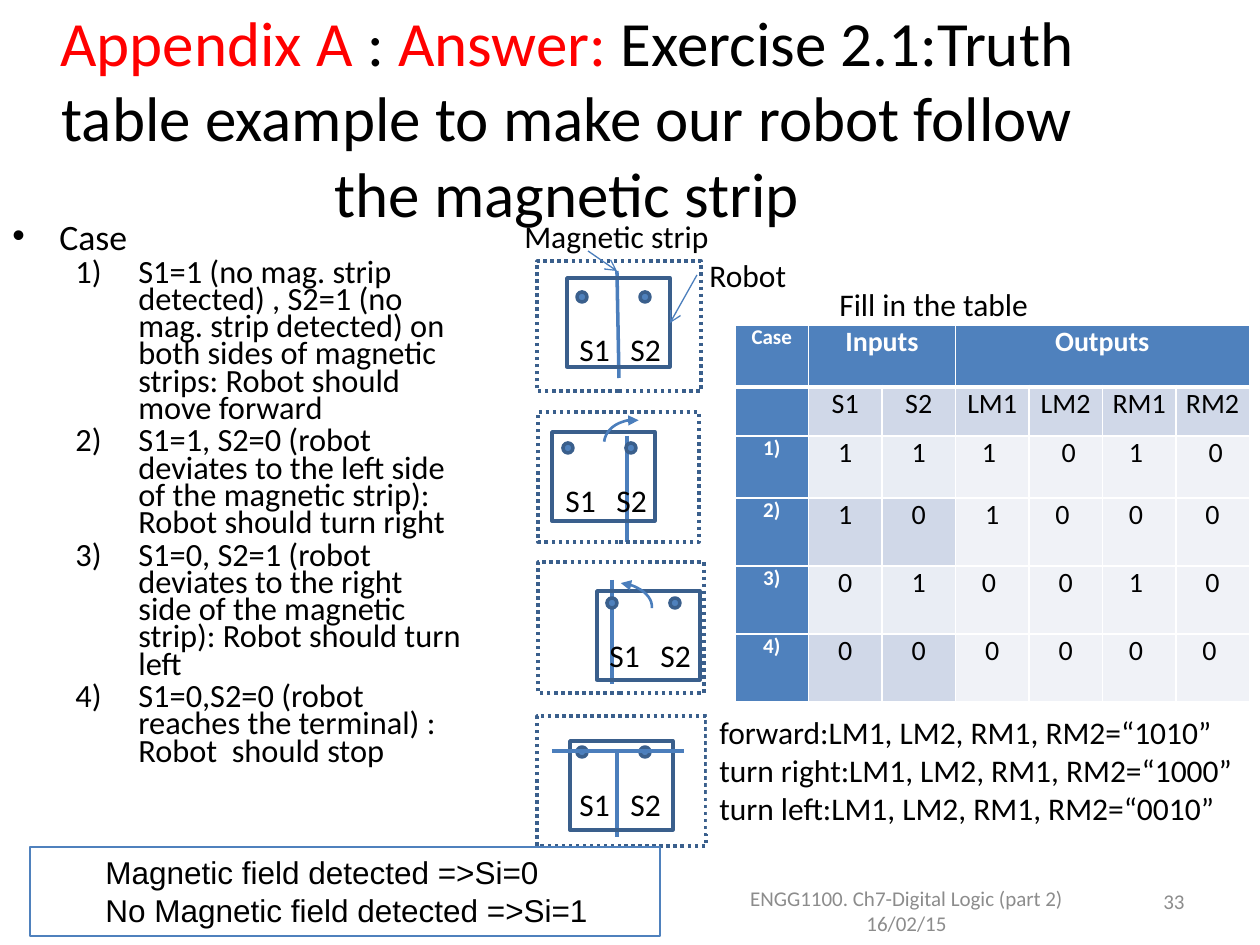
import pptx
import pptx.dml.color
import pptx.enum.dml
import pptx.enum.shapes
import pptx.enum.text
import pptx.oxml.ns
import pptx.util
from lxml import etree

SCALE = 914400 / 126
SHAPE = pptx.enum.shapes.MSO_SHAPE
ALIGN = pptx.enum.text.PP_ALIGN
ANCHOR = pptx.enum.text.MSO_ANCHOR
FIT = pptx.enum.text.MSO_AUTO_SIZE
qn = pptx.oxml.ns.qn


def px(length):
    return pptx.util.Emu(round(length * SCALE))


def rgb(color):
    return pptx.dml.color.RGBColor.from_string(color)


def add_xml(parent, tag, **attributes):
    return etree.SubElement(parent, qn(tag), attributes)


class Board:
    """Holds the style and the current slide, with one method per kind of element."""

    font = "Calibri"
    black, white, red, grey = "000000", "FFFFFF", "FF0000", "8C8C8C"
    blue, edge, stroke = "4F81BD", "3A5F8C", "4B7EBC"
    band, pale = "D0D8E8", "E9EDF4"

    def __init__(self, slide):
        self.slide = slide

    def style(self, font, size, color=black, name=font, bold=False):
        font.size, font.name, font.bold = pptx.util.Pt(size), name, bold
        font.color.rgb = rgb(color)

    def title(self, frame, runs, size):
        heading = self.slide.shapes.title
        heading.left, heading.top, heading.width, heading.height = map(px, frame)
        body = heading.text_frame
        body.auto_size, body.vertical_anchor = FIT.NONE, ANCHOR.MIDDLE
        paragraph = body.paragraphs[0]
        paragraph.alignment = ALIGN.CENTER
        for wording, color in runs:
            run = paragraph.add_run()
            run.text = wording
            self.style(run.font, size, color)

    def set_lines(self, body, lines, size, align=ALIGN.LEFT, indent=0, tab=None, **look):
        for index, line in enumerate(lines):
            paragraph = body.paragraphs[0] if index == 0 else body.add_paragraph()
            paragraph.text, paragraph.alignment = line, align
            properties = paragraph._p.get_or_add_pPr()
            if indent:
                properties.set("marL", str(px(indent)))
            if tab:
                stops = add_xml(properties, "a:tabLst")
                add_xml(stops, "a:tab", pos=str(px(tab)), algn="l")
            self.style(paragraph.font, size, **look)

    def text(self, frame, lines, size=18, wrap=False, anchor=ANCHOR.TOP, **look):
        body = self.slide.shapes.add_textbox(*map(px, frame)).text_frame
        body.word_wrap, body.vertical_anchor = wrap, anchor
        body.auto_size = FIT.NONE if wrap else FIT.SHAPE_TO_FIT_TEXT
        self.set_lines(body, lines, size, **look)

    def cases(self, frame, heading, steps):
        body = self.slide.shapes.add_textbox(*map(px, frame)).text_frame
        body.word_wrap = True
        for index, line in enumerate([heading] + steps):
            first = index == 0
            paragraph = body.paragraphs[0] if first else body.add_paragraph()
            paragraph.text, paragraph.line_spacing = line, 0.7
            if not first:
                paragraph.level, paragraph.space_before = 1, pptx.util.Pt(3)
            margin, hanging = (47, -47) if first else (126, -63)
            properties = paragraph._p.get_or_add_pPr()
            properties.set("marL", str(px(margin)))
            properties.set("indent", str(px(hanging)))
            if first:
                add_xml(properties, "a:buFont", typeface="Arial")
                add_xml(properties, "a:buChar", char="•")
            else:
                add_xml(properties, "a:buAutoNum", type="arabicParenR")
            self.style(paragraph.font, 20.4 if first else 18.5)

    def shape(self, kind, frame, fill=None, line=None, weight=2, dotted=False):
        shape = self.slide.shapes.add_shape(kind, *map(px, frame))
        shape.shadow.inherit = False
        if fill:
            shape.fill.solid()
            shape.fill.fore_color.rgb = rgb(fill)
        else:
            shape.fill.background()
        if line:
            shape.line.color.rgb = rgb(line)
            shape.line.width = pptx.util.Pt(weight)
            if dotted:
                shape.line.dash_style = pptx.enum.dml.MSO_LINE.ROUND_DOT
        else:
            shape.line.fill.background()
        return shape

    def panel(self, frame, lines, fill=None, line=None, **look):
        body = self.shape(SHAPE.RECTANGLE, frame, fill, line, 0.75).text_frame
        body.word_wrap, body.vertical_anchor = True, ANCHOR.TOP
        self.set_lines(body, lines, 18, **look)

    def turn(self, frame, flip=False):
        arc = self.shape(SHAPE.ARC, frame, line=self.stroke, weight=1.5)
        arc.rotation = 276.1
        if flip:
            arc._element.spPr.find(qn("a:xfrm")).set("flipV", "1")
        add_xml(arc.line._get_or_add_ln(), "a:tailEnd", type="triangle")

    def line(self, ends, weight=2, arrow=False):
        straight = pptx.enum.shapes.MSO_CONNECTOR.STRAIGHT
        line = self.slide.shapes.add_connector(straight, *map(px, ends))
        line.line.color.rgb = rgb(self.stroke)
        line.line.width = pptx.util.Pt(weight)
        if arrow:
            add_xml(line.line._get_or_add_ln(), "a:tailEnd", type="arrow")
        add_xml(line._element.spPr, "a:effectLst")

    def robot(self, field, body, sensor, strip):
        self.line(strip)
        self.shape(SHAPE.RECTANGLE, field, line=self.edge, dotted=True)
        self.shape(SHAPE.RECTANGLE, (*body, 103, 89), line=self.edge)
        left, top = sensor
        for x in (left, left + 63):
            self.shape(SHAPE.OVAL, (x, top, 10, 10), self.blue, self.edge)
        self.text((left - 10, top + 32, 108, 50), ["S1\tS2"], tab=51)

    def cell(self, cell, wording, fill, size=16, opacity=None, thick=None, **look):
        cell.margin_left = cell.margin_right = px(9)
        cell.margin_top = cell.margin_bottom = 0
        cell.fill.solid()
        cell.fill.fore_color.rgb = rgb(fill)
        properties = cell._tc.get_or_add_tcPr()
        if opacity:
            color = properties.find(qn("a:solidFill"))[0]
            add_xml(color, "a:alpha", val=str(opacity * 1000))
        for index, side in enumerate(("lnL", "lnR", "lnT", "lnB")):
            width = pptx.util.Pt(3 if side == thick else 1)
            border = add_xml(properties, "a:" + side, w=str(width))
            add_xml(add_xml(border, "a:solidFill"), "a:srgbClr", val=self.white)
            properties.insert(index, border)
        self.set_lines(cell.text_frame, [wording], size, ALIGN.CENTER, **look)

    def truth_table(self, corner, column, heights, rows):
        frame = (*corner, column * len(rows[0]), sum(heights))
        table = self.slide.shapes.add_table(
            len(rows), len(rows[0]), *map(px, frame)).table
        for part in table.columns:
            part.width = px(column)
        for part, height in zip(table.rows, heights):
            part.height = px(height)
        for r, row in enumerate(rows):
            for c, wording in enumerate(row):
                cell = table.cell(r, c)
                thick = {0: "lnB", 1: "lnT"}.get(r)
                if r == 0 or c == 0:
                    self.cell(cell, wording, self.blue, 16 if c else 12,
                              thick=thick, color=self.white, bold=True)
                elif r > 1 and c > 2:
                    self.cell(cell, wording, self.pale, opacity=68)
                else:
                    self.cell(cell, wording, self.band if r % 2 else self.pale, thick=thick)
        table.cell(0, 1).merge(table.cell(0, 2))
        table.cell(0, 3).merge(table.cell(0, 6))


def main():
    deck = pptx.Presentation()
    deck.slide_width, deck.slide_height = px(1260), px(945)
    board = Board(deck.slides.add_slide(deck.slide_layouts[5]))

    board.title((0, 38, 1134, 157), [
        ("Appendix A ", board.red), (": ", board.black), ("Answer: ", board.red),
        ("Exercise 2.1:Truth table example to make our robot follow the magnetic strip",
         board.black)], 36)
    board.cases((0, 220, 474, 624), "Case", [
        "S1=1 (no mag. strip detected) , S2=1 (no mag. strip detected) on both sides "
        "of magnetic strips: Robot should move forward",
        "S1=1, S2=0 (robot deviates to the left side of the magnetic strip): "
        "Robot should turn right",
        "S1=0, S2=1 (robot deviates to the right side of the magnetic strip): "
        "Robot should turn left",
        "S1=0,S2=0 (robot reaches the terminal) : Robot  should stop"])
    board.truth_table((735, 325), 73.5, (62, 49, 62, 68, 68, 68), [
        ("Case", "Inputs", "", "Outputs", "", "", ""),
        ("", "S1", "S2", "LM1", "LM2", "RM1", "RM2"),
        ("1)", "1", "1", "1 ", " 0", "1 ", " 0"),
        ("2)", "1", "0", "1", "0 ", "0 ", "0"),
        ("3)", "0", "1", "0 ", "0", "1 ", "0"),
        ("4)", "0", "0", "0", "0", "0 ", "0 ")])

    for scene in (
            ((537, 261, 164, 130), (567, 278), (577, 292), (617, 271, 619, 378)),
            ((538, 412, 161, 130), (552, 432), (563, 443), (627, 436, 627, 542)),
            ((538, 562, 166, 131), (597, 591), (607, 598), (612, 580, 612, 684)),
            ((537, 716, 169, 130), (570, 741), (577, 747), (617, 752, 617, 837))):
        board.robot(*scene)
    board.line((552, 751, 684, 751))
    board.turn((611, 413, 50, 64))
    board.turn((597, 571, 43, 67), flip=True)

    board.text((512, 211, 212, 50), ["Magnetic strip"])
    board.line((588, 251, 617, 271), 0.75, arrow=True)
    board.text((697, 250, 103, 50), ["Robot"])
    board.line((697, 275, 670, 323), 0.75, arrow=True)
    board.text((827, 279, 217, 50), ["Fill in the table"])

    board.panel((707, 707, 544, 127), [
        "forward:LM1, LM2, RM1, RM2=“1010”",
        "turn right:LM1, LM2, RM1, RM2=“1000”",
        "turn left:LM1, LM2, RM1, RM2=“0010”"], fill=board.white)
    board.panel((30, 847, 630, 89), [
        "Magnetic field detected =>Si=0", "No Magnetic field detected =>Si=1"],
        line=board.blue, indent=63, name="Arial")
    board.text((707, 886, 399, 50), ["ENGG1100. Ch7-Digital Logic (part 2) 16/02/15"], 12,
               wrap=True, anchor=ANCHOR.MIDDLE, align=ALIGN.CENTER, color=board.grey)
    board.text((903, 876, 294, 50), ["33"], 12,
               wrap=True, anchor=ANCHOR.MIDDLE, align=ALIGN.RIGHT, color=board.grey)
    deck.save("out.pptx")


if __name__ == "__main__":
    main()
